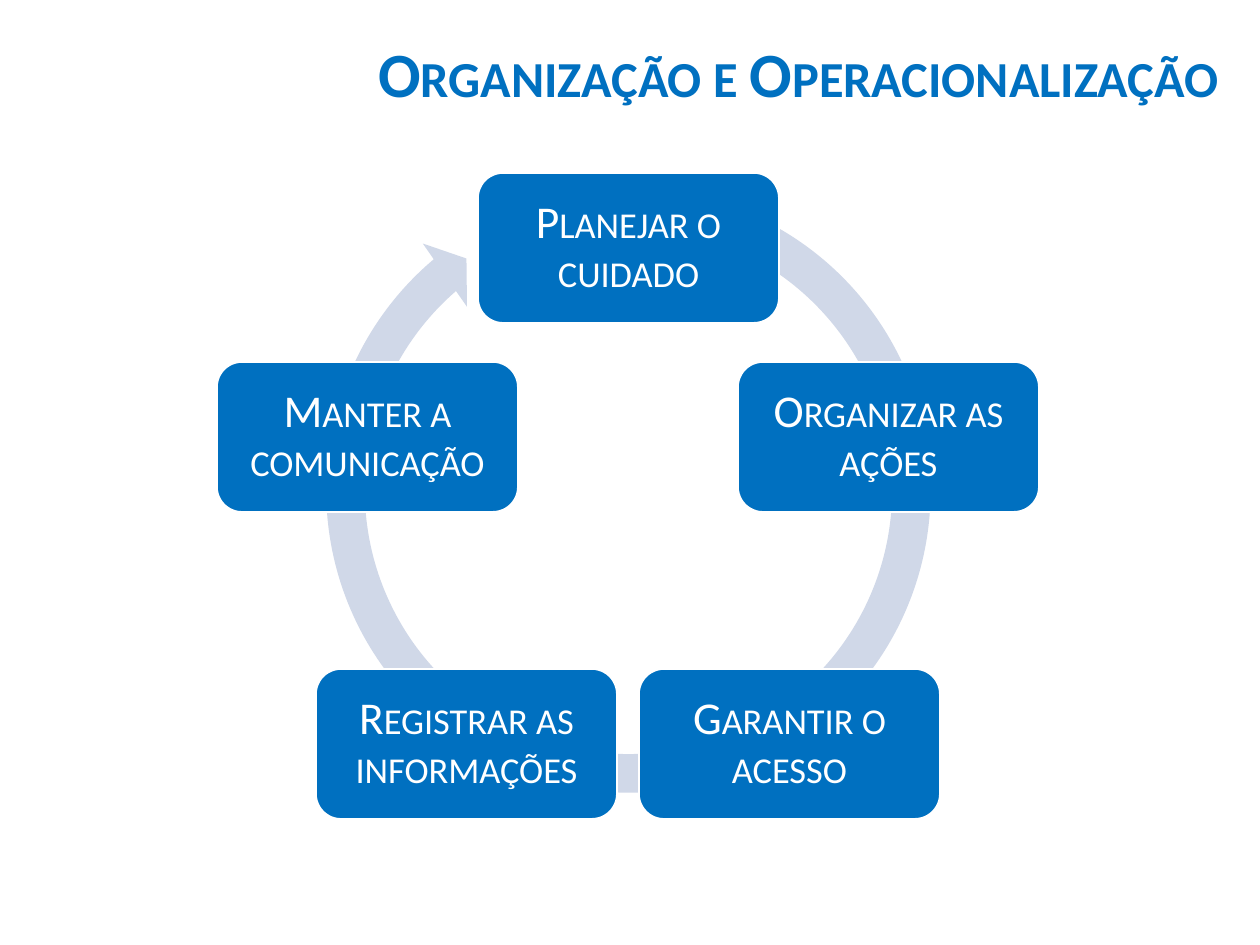
from dataclasses import dataclass
from math import cos, pi, sin

from pptx import Presentation
from pptx.dml.color import RGBColor
from pptx.enum.shapes import MSO_SHAPE
from pptx.enum.text import MSO_ANCHOR, PP_ALIGN
from pptx.util import Emu, Pt

EMU_PER_PX = 914400 / 126
BLUE, PALE, WHITE = "0070C0", "D0D8E8", "FFFFFF"
CENTER_X, CENTER_Y, RADIUS = 628, 522, 274
BOX_W, BOX_H = 301, 150
STEPS = ["Planejar o cuidado", "Organizar as ações", "Garantir o acesso",
         "Registrar as informações", "Manter a comunicação"]


@dataclass
class Box:
    left: int
    top: int
    width: int
    height: int

    def emu(self) -> list[Emu]:
        return [px(v) for v in (self.left, self.top, self.width, self.height)]


def px(n: int) -> Emu:
    return Emu(round(n * EMU_PER_PX))


def rgb(value: str) -> RGBColor:
    return RGBColor.from_string(value)


def write(sp, text: str, size: int, color: str, align, bold: bool, inset: int) -> None:
    """Put one small-caps paragraph in a shape, centred vertically."""
    tf = sp.text_frame
    frame = {"word_wrap": True, "vertical_anchor": MSO_ANCHOR.MIDDLE,
             "margin_left": px(inset), "margin_right": px(inset),
             "margin_top": px(6), "margin_bottom": px(6)}
    for name, value in frame.items():
        setattr(tf, name, value)
    p = tf.paragraphs[0]
    p.alignment, p.line_spacing = align, 0.9
    r = p.add_run()
    r.text = text
    for name, value in {"name": "Calibri", "size": Pt(size), "bold": bold}.items():
        setattr(r.font, name, value)
    r.font.color.rgb = rgb(color)
    r._r.get_or_add_rPr().set("cap", "small")


def add_filled(s, kind, box: Box, fill: str):
    sp = s.shapes.add_shape(kind, *box.emu())
    sp.shadow.inherit = False
    sp.fill.solid()
    sp.fill.fore_color.rgb = rgb(fill)
    return sp


def add_cycle_arrow(s) -> None:
    sp = add_filled(s, MSO_SHAPE.CIRCULAR_ARROW, Box(307, 169, 643, 643), PALE)
    sp.line.fill.background()
    for i, value in enumerate((0.06, 3.31, 137.73, 173.87, 0.06)):
        sp.adjustments[i] = value


def add_step(s, index: int, text: str) -> None:
    """Place a step on the circle, clockwise from the top."""
    angle = 2 * pi * index / len(STEPS)
    left = round(CENTER_X + RADIUS * sin(angle) - BOX_W / 2)
    top = round(CENTER_Y - RADIUS * cos(angle) - BOX_H / 2)
    sp = add_filled(s, MSO_SHAPE.ROUNDED_RECTANGLE, Box(left, top, BOX_W, BOX_H), BLUE)
    sp.line.color.rgb = rgb(WHITE)
    sp.line.width = Pt(1)
    write(sp, text, 26, WHITE, PP_ALIGN.CENTER, False, 21)


def main() -> None:
    prs = Presentation()
    prs.slide_width, prs.slide_height = px(1260), px(945)
    s = prs.slides.add_slide(prs.slide_layouts[6])
    add_cycle_arrow(s)
    for index, text in enumerate(STEPS):
        add_step(s, index, text)
    title = s.shapes.add_textbox(*Box(28, 39, 1204, 77).emu())
    write(title, "Organização e Operacionalização", 36, BLUE, PP_ALIGN.RIGHT, True, 13)
    prs.save("out.pptx")


if __name__ == "__main__":
    main()
